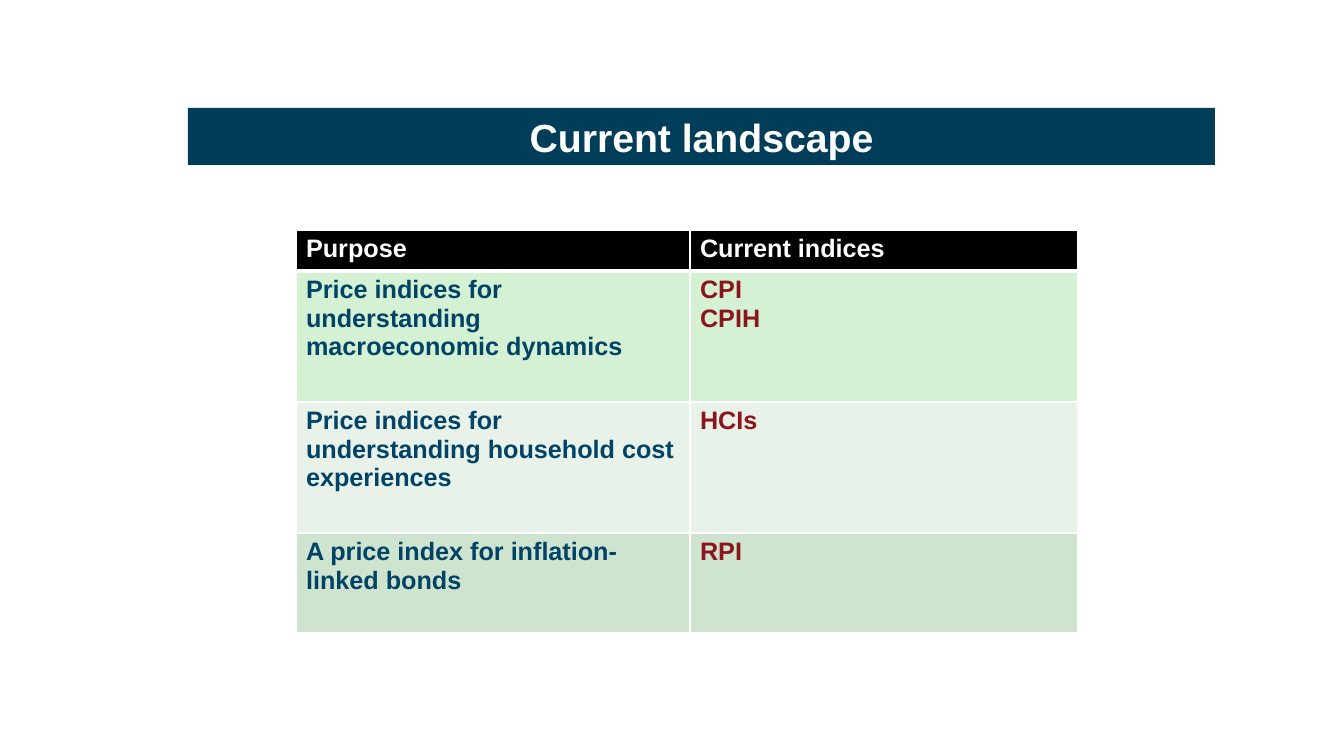
from lxml import etree
from pptx import Presentation
from pptx.dml.color import RGBColor as RGB
from pptx.enum.text import MSO_ANCHOR as ANCHOR, MSO_AUTO_SIZE as FIT, PP_ALIGN as ALIGN
from pptx.oxml.ns import qn
from pptx.util import Emu, Pt

COLORS = {
    "white": "FFFFFF", "black": "000000", "bar": "003D59", "purpose": "004366",
    "index": "8B151D", "mint": "D4F2D3", "pale": "E8F2E8", "sage": "CEE4CE",
}
ROWS = [
    (41, "black", ("white", "white"), ("Purpose", "Current indices")),
    (131, "mint", ("purpose", "index"),
     ("Price indices for understanding macroeconomic dynamics", "CPI\nCPIH")),
    (131, "pale", ("purpose", "index"),
     ("Price indices for understanding household cost experiences", "HCIs")),
    (100, "sage", ("purpose", "index"),
     ("A price index for inflation-linked bonds", "RPI")),
]


def px(n):
    return Emu(round(n * 914400 / 100.8))


class Deck:
    """Holds the style and the current slide, and adds elements to it."""

    def __init__(self, font="Arial"):
        self.font = font
        self.prs = Presentation()
        self.prs.slide_width, self.prs.slide_height = px(1344), px(756)
        self.s = self.prs.slides.add_slide(self.prs.slide_layouts[5])

    def color(self, name):
        return RGB.from_string(COLORS[name])

    def fill(self, item, name):
        item.fill.solid()
        item.fill.fore_color.rgb = self.color(name)

    def text(self, tf, text, size, color, align=ALIGN.LEFT):
        tf.text = text
        for p in tf.paragraphs:
            p.alignment = align
            for key, value in {"name": self.font, "size": Pt(size), "bold": True}.items():
                setattr(p.font, key, value)
            p.font.color.rgb = self.color(color)

    def title(self, text, left, top, width, height):
        sp = self.s.shapes.title
        box = {"left": left, "top": top, "width": width, "height": height}
        for key, value in box.items():
            setattr(sp, key, px(value))
        self.fill(sp, "bar")
        tf = sp.text_frame
        for key, value in {"auto_size": FIT.NONE, "word_wrap": True,
                           "vertical_anchor": ANCHOR.MIDDLE}.items():
            setattr(tf, key, value)
        self.text(tf, text, 28, "white", ALIGN.CENTER)

    def borders(self, cell, widths):
        tcPr = cell._tc.get_or_add_tcPr()
        for i, (side, width) in enumerate(widths.items()):
            ln = etree.Element(qn("a:ln" + side), w=str(Pt(width)))
            solid = etree.SubElement(ln, qn("a:solidFill"))
            etree.SubElement(solid, qn("a:srgbClr"), val=COLORS["white"])
            tcPr.insert(i, ln)

    def table(self, rows, left, top, widths):
        heights = [row[0] for row in rows]
        table = self.s.shapes.add_table(len(rows), len(widths), px(left), px(top),
                                        px(sum(widths)), px(sum(heights))).table
        for column, width in zip(table.columns, widths):
            column.width = px(width)
        for i, (height, fill, colors, texts) in enumerate(rows):
            table.rows[i].height = px(height)
            for j, (color, text) in enumerate(zip(colors, texts)):
                cell = table.cell(i, j)
                self.text(cell.text_frame, text, 18, color)
                self.fill(cell, fill)
                self.borders(cell, {"L": 1, "R": 1, "T": 3 if i == 1 else 1,
                                    "B": 3 if i == 0 else 1})


def main():
    deck = Deck()
    deck.title("Current landscape", 188, 108, 1027, 57)
    deck.table(ROWS, 296, 230, (394, 388))
    deck.prs.save("out.pptx")


if __name__ == "__main__":
    main()
